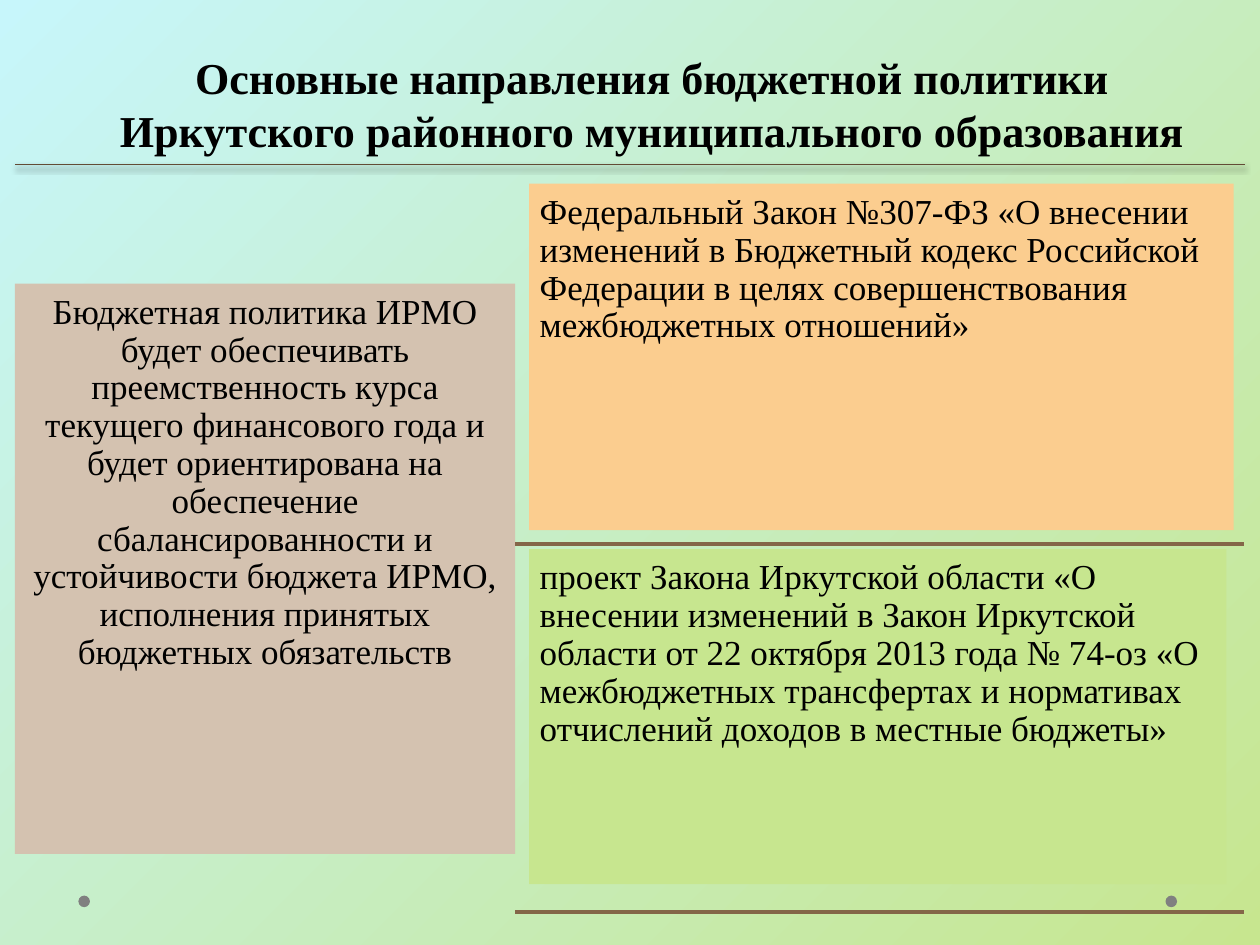
from lxml.etree import SubElement
from pptx import Presentation
from pptx.dml.color import RGBColor
from pptx.enum.shapes import MSO_CONNECTOR, MSO_SHAPE
from pptx.enum.text import MSO_ANCHOR, MSO_AUTO_SIZE, PP_ALIGN
from pptx.oxml.ns import qn
from pptx.util import Pt

COLORS = {
    "sky": "C7F6FB",
    "green": "C7E68F",
    "sand": "D4C2B0",
    "orange": "FBCD8F",
    "brown": "846648",
    "dark brown": "624B35",
    "gray": "808080",
    "black": "000000",
}
FONT = "Times New Roman"
TITLE = "Основные направления бюджетной политики Иркутского районного муниципального образования"
PANELS = [
    ("Бюджетная политика ИРМО будет обеспечивать преемственность курса текущего финансового года и "
     "будет ориентирована на обеспечение сбалансированности и устойчивости бюджета ИРМО, "
     "исполнения принятых бюджетных обязательств",
     "sand", PP_ALIGN.CENTER, (8.6, 162, 285.8, 326)),
    ("Федеральный Закон №307-ФЗ «О внесении изменений в Бюджетный кодекс Российской Федерации "
     "в целях совершенствования межбюджетных отношений»",
     "orange", PP_ALIGN.LEFT, (302.4, 105, 402.5, 198)),
    ("проект Закона Иркутской области «О внесении изменений в Закон Иркутской области "
     "от 22 октября 2013 года № 74-оз «О межбюджетных трансфертах и нормативах отчислений "
     "доходов в местные бюджеты»",
     "green", PP_ALIGN.LEFT, (302.4, 313.8, 398.5, 191.5)),
]
RULES = [
    (8.6, 711.4, 94.2, "dark brown", 0.75, True),
    (294.4, 710.8, 310.8, "brown", 2.25, False),
    (294.4, 710.8, 521.2, "brown", 2.25, False),
]
DOT_LEFTS = (666, 44.8)
DOT_TOP, DOT_SIZE = 511.8, 6.6


def color(name):
    return RGBColor.from_string(COLORS[name])


def write_text(shape, text, size, align, bold=False, anchor=MSO_ANCHOR.TOP, inset=(6, 6), spacing=1.0):
    frame = shape.text_frame
    frame.word_wrap = True
    frame.auto_size = MSO_AUTO_SIZE.NONE
    frame.vertical_anchor = anchor
    frame.margin_left = frame.margin_right = Pt(inset[0])
    frame.margin_top = frame.margin_bottom = Pt(inset[1])
    paragraph = frame.paragraphs[0]
    paragraph.alignment = align
    paragraph.line_spacing = spacing
    run = paragraph.add_run()
    run.text = text
    run.font.name = FONT
    run.font.size = Pt(size)
    run.font.bold = bold
    run.font.color.rgb = color("black")


def add_filled(slide, kind, box, fill):
    shape = slide.shapes.add_shape(kind, *map(Pt, box))
    shape.shadow.inherit = False
    shape.fill.solid()
    shape.fill.fore_color.rgb = color(fill)
    shape.line.fill.background()
    return shape


def add_rule(slide, left, right, top, line_color, width, shadowed):
    rule = slide.shapes.add_connector(MSO_CONNECTOR.STRAIGHT, Pt(left), Pt(top), Pt(right), Pt(top))
    rule.line.color.rgb = color(line_color)
    rule.line.width = Pt(width)
    effects = SubElement(rule._element.spPr, qn("a:effectLst"))
    if shadowed:
        shadow = SubElement(effects, qn("a:outerShdw"), blurRad=str(Pt(3.1)), dist=str(Pt(1.8)),
                            dir="5400000", rotWithShape="0")
        shade = SubElement(shadow, qn("a:srgbClr"), val=COLORS["black"])
        SubElement(shade, qn("a:alpha"), val="35000")


def main():
    presentation = Presentation()
    presentation.slide_width, presentation.slide_height = Pt(720), Pt(540)
    slide = presentation.slides.add_slide(presentation.slide_layouts[5])

    background = slide.background.fill
    background.gradient()
    background.gradient_angle = 315
    for stop, name in zip(background.gradient_stops, ("sky", "green")):
        stop.color.rgb = color(name)

    for left in DOT_LEFTS:
        add_filled(slide, MSO_SHAPE.OVAL, (left, DOT_TOP, DOT_SIZE, DOT_SIZE), "gray")

    title = slide.shapes.title
    title.left, title.top, title.width, title.height = Pt(54), Pt(15), Pt(637), Pt(78)
    write_text(title, TITLE, 25.2, PP_ALIGN.CENTER, bold=True, anchor=MSO_ANCHOR.BOTTOM, inset=(7.2, 3.6))

    for text, fill, align, box in PANELS:
        panel = add_filled(slide, MSO_SHAPE.RECTANGLE, box, fill)
        write_text(panel, text, 20, align, spacing=0.9)

    for rule in RULES:
        add_rule(slide, *rule)

    presentation.save("out.pptx")


if __name__ == "__main__":
    main()
